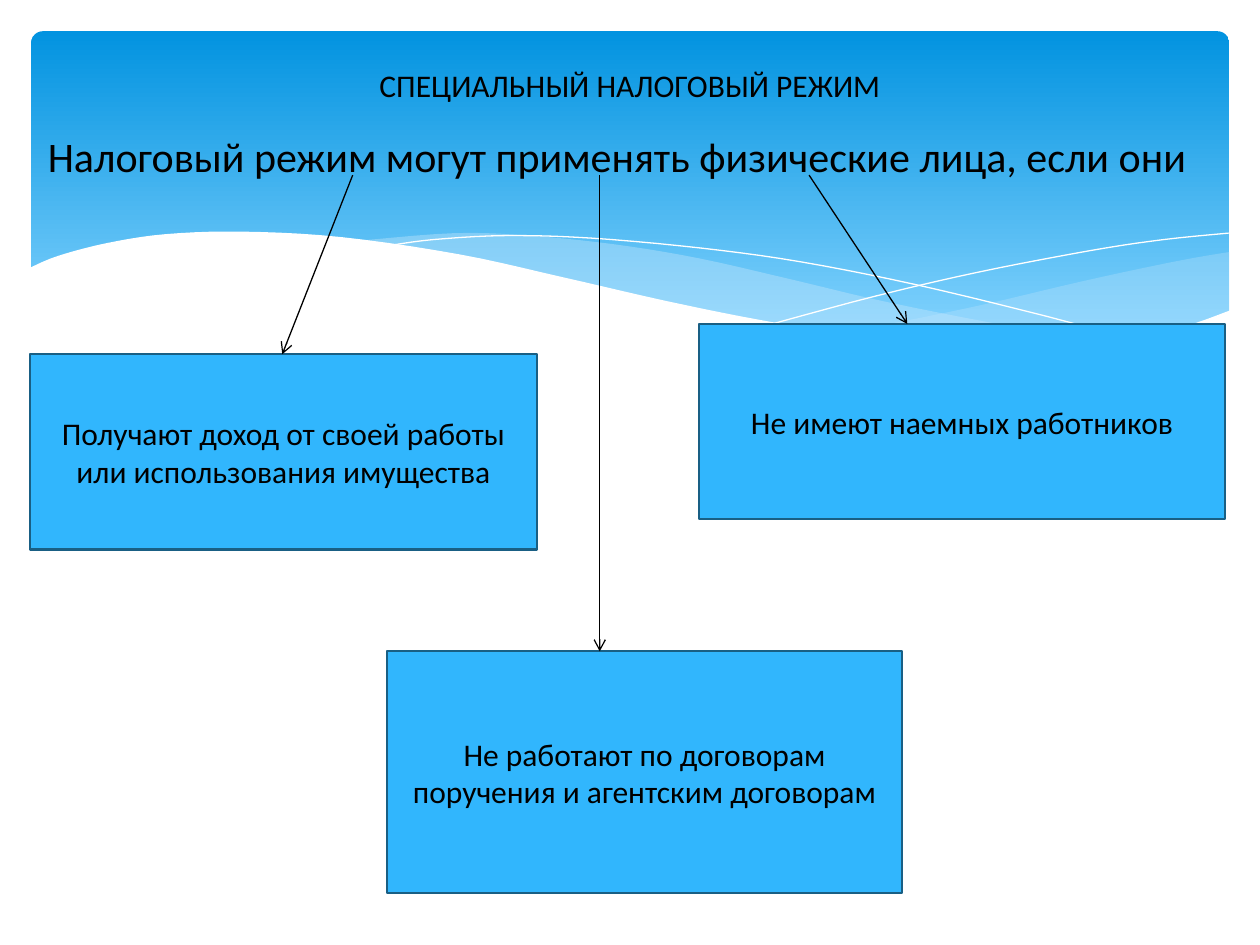
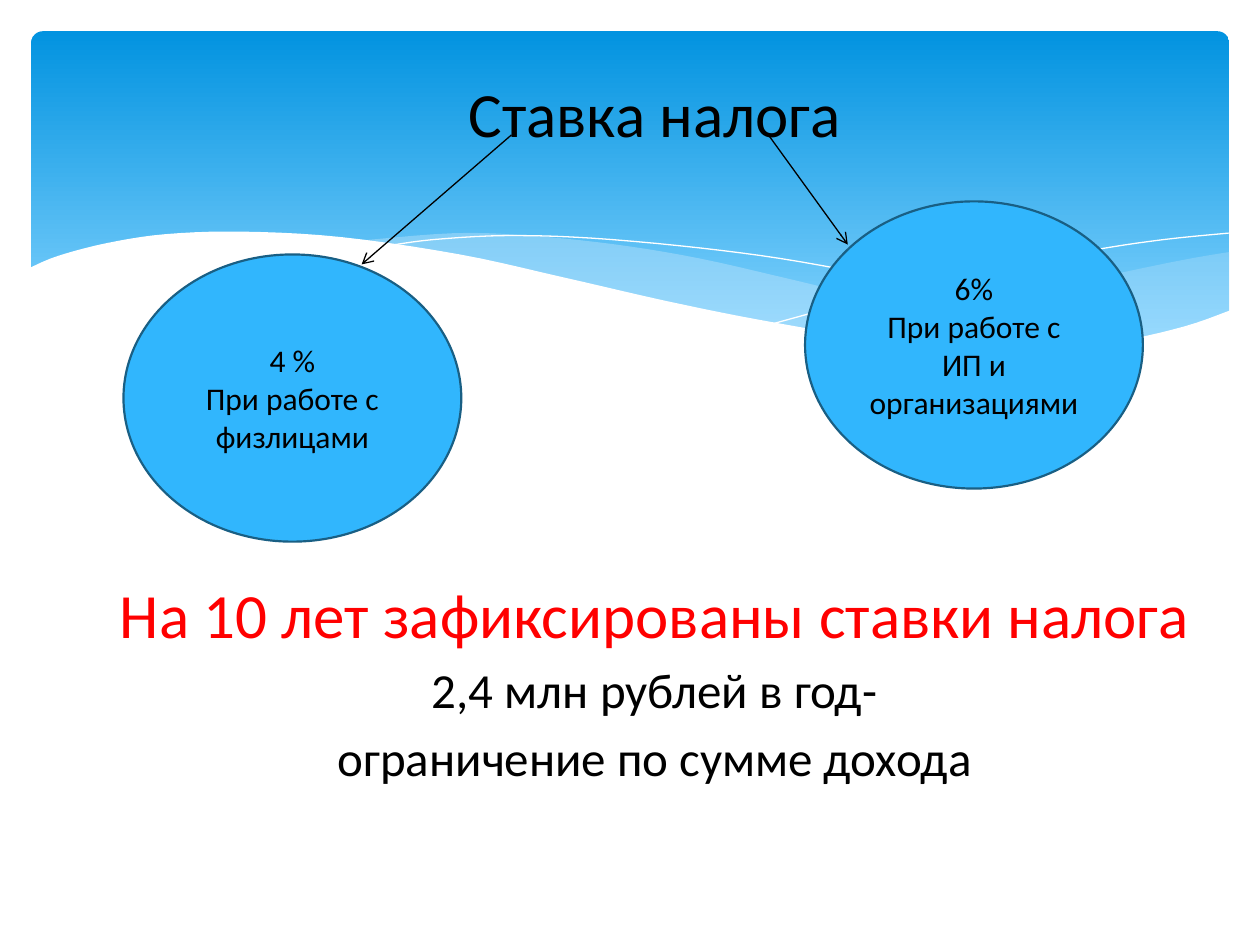
"""Build two slides on the special tax regime over a shared wave backdrop."""
import lxml.etree
import pptx
import pptx.dml.color
import pptx.enum.shapes
import pptx.enum.text
import pptx.oxml.ns
import pptx.util

RGBColor = pptx.dml.color.RGBColor
Cm = pptx.util.Cm
Pt = pptx.util.Pt
MSO_SHAPE = pptx.enum.shapes.MSO_SHAPE
PP_ALIGN = pptx.enum.text.PP_ALIGN
MSO_ANCHOR = pptx.enum.text.MSO_ANCHOR
qn = pptx.oxml.ns.qn

BLACK = RGBColor(0x00, 0x00, 0x00)
WHITE = RGBColor(0xFF, 0xFF, 0xFF)
RED = RGBColor(0xFF, 0x00, 0x00)
SKY = RGBColor(0x31, 0xB6, 0xFD)
EDGE = RGBColor(0x19, 0x5F, 0x84)
BAND_TOP = RGBColor(0x02, 0x93, 0xE0)
BAND_BOTTOM = RGBColor(0x83, 0xD3, 0xFE)
VEIL = RGBColor(0xC6, 0xE7, 0xFC)
FONT = "Calibri"

BAND = (0.63, 0.63, 24.15, 6.86)
RIGHT_VEIL = [
    [(24.79, 5.08), (23.75, 5.26), (21.87, 5.66), (19.79, 6.15), (17.93, 6.53), (16.79, 6.73)],
    [(16.79, 6.73), (17.91, 6.88), (19.23, 7.01), (20.68, 7.06), (21.92, 6.99), (22.99, 6.83),
     (23.93, 6.58), (24.79, 6.27)],
]
MIDDLE_VEIL = [
    [(22.68, 6.93), (20.5, 6.6), (17.93, 6.1), (15.98, 5.64), (14.1, 5.21), (12.42, 4.93),
     (10.67, 4.75), (9.17, 4.7), (7.26, 4.85)],
    [(7.26, 4.85), (9.19, 5.16), (11.4, 5.64), (13.46, 6.1), (15.7, 6.55), (17.65, 6.86),
     (19.33, 7.04), (20.78, 7.06), (22.68, 6.93)],
]
FALLING_LINE = [
    [(7.85, 4.95), (8.74, 4.83), (10.19, 4.75), (11.91, 4.8), (14.12, 5), (16.15, 5.28),
     (18.47, 5.74), (21.11, 6.38), (23.04, 6.91)],
]
RISING_LINE = [
    [(15.57, 6.53), (17.65, 5.97), (19.71, 5.49), (22, 5.05), (23.47, 4.83), (24.77, 4.7)],
]
WHITE_WAVE = [
    [(0.58, 5.41), (1.17, 5.16), (2.16, 4.9), (3.35, 4.72), (4.9, 4.67), (6.88, 4.78),
     (9.27, 5.13), (11.35, 5.59), (13.44, 6.07), (15.32, 6.45), (17.48, 6.81), (19.33, 6.99),
     (20.9, 7.04), (22.53, 6.88), (23.88, 6.58), (24.82, 6.25)],
    [(24.82, 8.36), (0.58, 8.36)],
]
WAVES = [
    dict(curves=RIGHT_VEIL, fill=VEIL, alpha=29),
    dict(curves=MIDDLE_VEIL, fill=VEIL, alpha=40),
    dict(curves=FALLING_LINE),
    dict(curves=RISING_LINE),
    dict(curves=WHITE_WAVE, fill=WHITE),
]

SLIDES = [
    dict(
        title=("СПЕЦИАЛЬНЫЙ НАЛОГОВЫЙ РЕЖИМ", 18, (1.27, 1.12, 22.86, 1.19)),
        body_box=(0.71, 2.51, 24, 14.5),
        body_align=PP_ALIGN.LEFT,
        body=[("Налоговый режим могут применять физические лица, если они", 24, BLACK)],
        kind=MSO_SHAPE.RECTANGLE,
        figures=[
            ("Получают доход от своей работы или использования имущества", (0.61, 7.14, 10.21, 3.94)),
            ("Не имеют наемных работников", (14.1, 6.53, 10.59, 3.94)),
            ("Не работают по договорам поручения и агентским договорам", (7.8, 13.13, 10.39, 4.88)),
        ],
        arrows=[(7.11, 3.53, 5.69, 7.14), (16.31, 3.53, 18.29, 6.53), (12.09, 3.53, 12.09, 13.13)],
    ),
    dict(
        title=("Ставка налога", 36, (1.88, 1.35, 22.63, 1.83)),
        body_box=(1.88, 11.47, 22.63, 5.55),
        body_align=PP_ALIGN.CENTER,
        body=[
            ("На 10 лет зафиксированы ставки налога", 36, RED),
            ("2,4 млн рублей в год-", 28, BLACK),
            ("ограничение по сумме дохода", 28, BLACK),
        ],
        kind=MSO_SHAPE.OVAL,
        figures=[
            ("4 %\nПри работе с физлицами", (2.49, 5.13, 6.81, 5.79)),
            ("6%\nПри работе с ИП и организациями", (16.23, 4.06, 6.81, 5.79)),
        ],
        arrows=[(10.31, 2.72, 7.29, 5.33), (15.49, 2.72, 17.09, 4.93)],
    ),
]


def cm(values):
    return [Cm(v) for v in values]


def smooth(points, steps=5):
    """Return the points of a Catmull-Rom curve through the given points."""
    if len(points) < 3:
        return points
    padded = [points[0], *points, points[-1]]
    curve = [points[0]]
    for a, b, c, d in zip(padded, padded[1:], padded[2:], padded[3:]):
        for t in (i / steps for i in range(1, steps + 1)):
            curve.append(tuple(
                (2 * q + (r - p) * t + (2 * p - 5 * q + 4 * r - s) * t ** 2
                 + (3 * q - p - 3 * r + s) * t ** 3) / 2
                for p, q, r, s in zip(a, b, c, d)))
    return curve


def style_paragraph(p, size, color, align):
    p.alignment = align
    for r in p.runs:
        r.font.name = FONT
        r.font.size = Pt(size)
        r.font.color.rgb = color


def place(sp, box):
    sp.left, sp.top, sp.width, sp.height = cm(box)


def add_band(s):
    sp = s.shapes.add_shape(MSO_SHAPE.ROUNDED_RECTANGLE, *cm(BAND))
    sp.adjustments[0] = 0.034
    sp.shadow.inherit = False
    sp.line.fill.background()
    sp.fill.gradient()
    sp.fill.gradient_angle = 270
    stops = zip(sp.fill.gradient_stops, (0, 0.9), (BAND_TOP, BAND_BOTTOM))
    for stop, position, color in stops:
        stop.position = position
        stop.color.rgb = color
    return sp


def add_wave(s, curves, fill=None, alpha=100):
    points = [cm(point) for curve in curves for point in smooth(curve)]
    builder = s.shapes.build_freeform(*points[0], scale=1.0)
    builder.add_line_segments(points[1:], close=fill is not None)
    sp = builder.convert_to_shape()
    sp.shadow.inherit = False
    if fill is None:
        sp.fill.background()
        sp.line.color.rgb = WHITE
        sp.line.width = Pt(0)
        return sp
    sp.line.fill.background()
    sp.fill.solid()
    sp.fill.fore_color.rgb = fill
    if alpha < 100:
        clr = sp.element.spPr.find(qn("a:solidFill")).find(qn("a:srgbClr"))
        lxml.etree.SubElement(clr, qn("a:alpha"), val=str(alpha * 1000))
    return sp


def add_backdrop(prs, s):
    """Draw the backdrop and move it to the slide master."""
    tree = prs.slide_master.shapes.element
    backdrop = [add_band(s)] + [add_wave(s, **wave) for wave in WAVES]
    for i, sp in enumerate(backdrop):
        sp.element.xpath("./p:nvSpPr/p:cNvPr")[0].set("id", str(100 + i))
        tree.insert(2 + i, sp.element)


def set_title(s, text, size, box):
    sp = s.shapes.title
    place(sp, box)
    tf = sp.text_frame
    tf.text = text
    tf.auto_size = pptx.enum.text.MSO_AUTO_SIZE.NONE
    tf.vertical_anchor = MSO_ANCHOR.MIDDLE
    style_paragraph(tf.paragraphs[0], size, BLACK, PP_ALIGN.CENTER)


def set_body(s, lines, box, align):
    sp = s.placeholders[1]
    place(sp, box)
    tf = sp.text_frame
    tf.text = "\n".join(text for text, size, color in lines)
    tf.auto_size = pptx.enum.text.MSO_AUTO_SIZE.NONE
    for i, (p, (text, size, color)) in enumerate(zip(tf.paragraphs, lines)):
        style_paragraph(p, size, color, align)
        p.space_before = Pt(5 if i else 0)
        pPr = p._p.get_or_add_pPr()
        pPr.set("marL", "0")
        pPr.set("indent", "0")
        lxml.etree.SubElement(pPr, qn("a:buNone"))


def add_figure(s, kind, text, box):
    sp = s.shapes.add_shape(kind, *cm(box))
    sp.shadow.inherit = False
    sp.fill.solid()
    sp.fill.fore_color.rgb = SKY
    sp.line.color.rgb = EDGE
    sp.line.width = Pt(1.25)
    tf = sp.text_frame
    tf.text = text
    tf.word_wrap = True
    tf.vertical_anchor = MSO_ANCHOR.MIDDLE
    for p in tf.paragraphs:
        style_paragraph(p, 18, BLACK, PP_ALIGN.CENTER)


def add_arrow(s, ends):
    line = s.shapes.add_connector(pptx.enum.shapes.MSO_CONNECTOR.STRAIGHT, *cm(ends))
    line.line.color.rgb = BLACK
    line.line.width = Pt(0.75)
    spPr = line.element.spPr
    lxml.etree.SubElement(spPr.find(qn("a:ln")), qn("a:tailEnd"), type="arrow")
    lxml.etree.SubElement(spPr, qn("a:effectLst"))


def main():
    prs = pptx.Presentation()
    prs.slide_width, prs.slide_height = Cm(25.4), Cm(19.05)
    for i, content in enumerate(SLIDES):
        s = prs.slides.add_slide(prs.slide_layouts[1])
        if i == 0:
            add_backdrop(prs, s)
        set_title(s, *content["title"])
        set_body(s, content["body"], content["body_box"], content["body_align"])
        for text, box in content["figures"]:
            add_figure(s, content["kind"], text, box)
        for ends in content["arrows"]:
            add_arrow(s, ends)
    prs.save("out.pptx")


if __name__ == "__main__":
    main()
